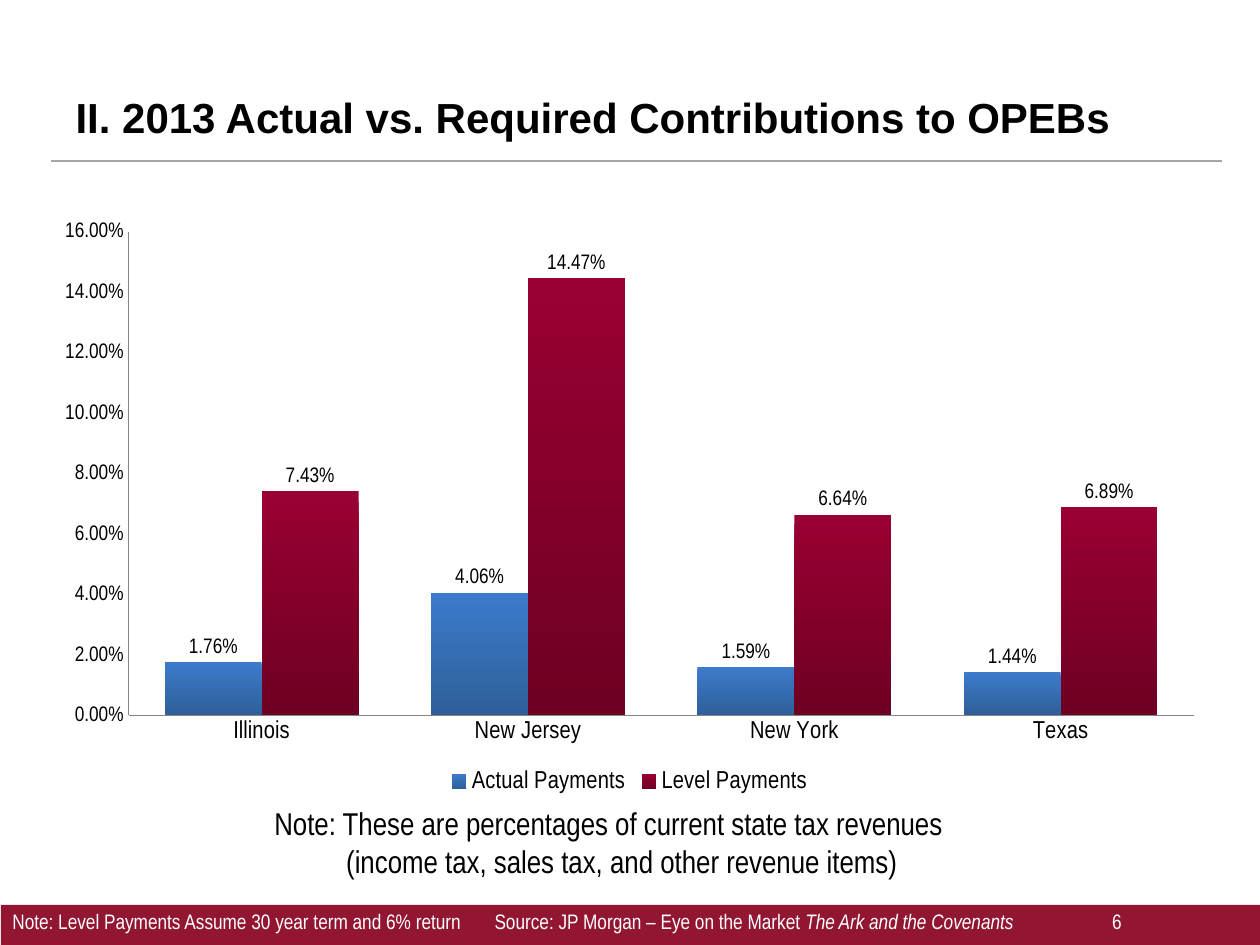
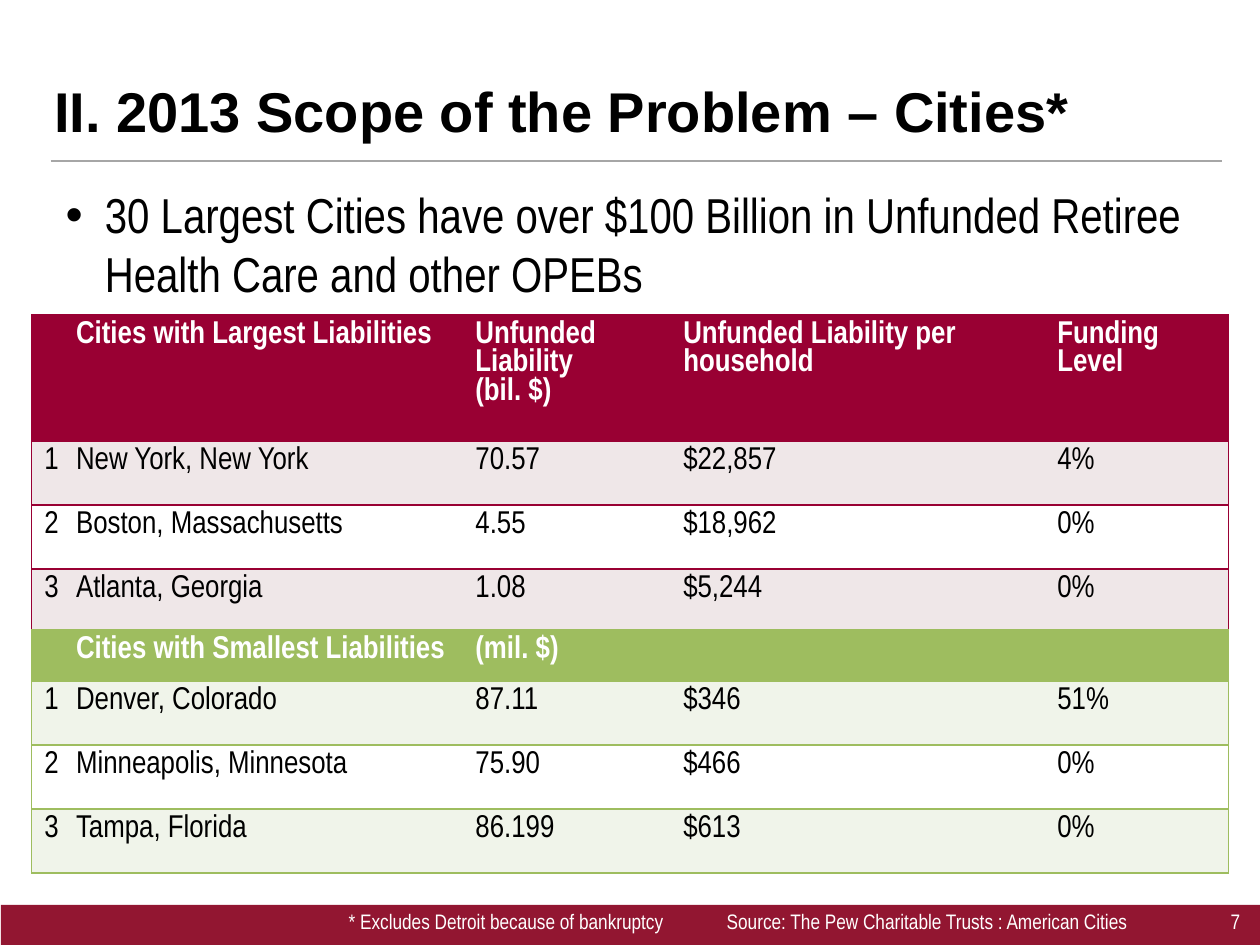
from dataclasses import dataclass

from lxml.etree import SubElement
from pptx import Presentation
from pptx.chart.data import CategoryChartData
from pptx.dml.color import RGBColor
from pptx.enum.chart import XL_CHART_TYPE as ChartType
from pptx.enum.chart import XL_LABEL_POSITION as LabelPosition
from pptx.enum.chart import XL_LEGEND_POSITION as LegendPosition
from pptx.enum.chart import XL_TICK_MARK as TickMark
from pptx.enum.shapes import MSO_CONNECTOR as Connector
from pptx.enum.shapes import MSO_SHAPE as Shape
from pptx.enum.text import MSO_ANCHOR as Anchor
from pptx.enum.text import MSO_AUTO_SIZE as AutoSize
from pptx.enum.text import PP_ALIGN as Align
from pptx.oxml.ns import qn
from pptx.util import Cm, Pt


@dataclass(frozen=True)
class Theme:
    heading: str = "Arial"
    text: str = "Arial Narrow"
    black: str = "000000"
    white: str = "FFFFFF"
    band: str = "921631"
    rule: str = "A6A6A6"
    axis: str = "868686"
    crimson: str = "990033"
    crimson_tint: str = "EFE7E8"
    green: str = "9EBD5F"
    green_tint: str = "F0F4EA"
    actual_bars: tuple = ("3C7BCB", "2E5F99")
    level_bars: tuple = ("990033", "6E0022")
    body_size: int = 28
    table_size: int = 18
    legend_size: int = 14
    small_size: int = 12


theme = Theme()


def style(font, size, color=theme.black, name=theme.text, bold=False):
    font.name, font.size, font.bold = name, Pt(size), bold
    font.color.rgb = RGBColor.from_string(color)


def add_border(cell, side, color):
    line = SubElement(cell._tc.get_or_add_tcPr(), qn(f"a:{side}"), w=str(Pt(1)))
    fill = SubElement(line, qn("a:solidFill"))
    SubElement(fill, qn("a:srgbClr"), val=color)


deck = Presentation()
deck.slide_width, deck.slide_height = Cm(25.4), Cm(19.05)

# What differs in the titles and footers: layout, title (text, size, left, top, width),
# footer (left, inset, tab stops, runs with their italics)
page_parts = [
    (5, ("II. 2013 Actual vs. Required Contributions to OPEBs", 24, 1.27, 0.43, 24.61),
     (0, 0.25, (9.72, 22.17),
      [("Note: Level Payments Assume 30 year term and 6% return\t"
        "Source: JP Morgan – Eye on the Market ", False),
       ("The Ark and the Covenants", True), ("\t6", False)])),
    (1, ("II. 2013 Scope of the Problem – Cities*", 32, 0.84, 0.48, 24.13),
     (5.51, 1.52, (7.62, 17.78),
      [("* Excludes Detroit because of bankruptcy\t"
        "Source: The Pew Charitable Trusts : American Cities\t7", False)])),
]

# Shared frame: band, rule, title, footer
pages = []
for layout, (title_text, title_size, left, top, width), footer_parts in page_parts:
    page = deck.slides.add_slide(deck.slide_layouts[layout])
    pages.append(page)

    band = page.shapes.add_shape(Shape.RECTANGLE, Cm(0.02), Cm(18.24), Cm(25.4), Cm(0.81))
    band.shadow.inherit = False
    band.fill.solid()
    band.fill.fore_color.rgb = RGBColor.from_string(theme.band)
    band.line.fill.background()

    rule = page.shapes.add_connector(Connector.STRAIGHT, Cm(1.02), Cm(3.25), Cm(24.64), Cm(3.25))
    rule.line.color.rgb = RGBColor.from_string(theme.rule)
    rule.line.width = Pt(1.25)
    SubElement(rule._element.spPr, qn("a:effectLst"))

    title = page.shapes.title
    title.left, title.top, title.width, title.height = Cm(left), Cm(top), Cm(width), Cm(2.57)
    title.text_frame.text = title_text
    title.text_frame.vertical_anchor = Anchor.BOTTOM
    title.text_frame.auto_size = AutoSize.NONE
    para = title.text_frame.paragraphs[0]
    para.alignment, para.line_spacing = Align.LEFT, 0.9
    style(para.font, title_size, name=theme.heading, bold=True)

    left, inset, stops, runs = footer_parts
    footer = page.shapes.add_textbox(Cm(left), Cm(18.21), Cm(25.27 - left), Cm(0.84))
    frame = footer.text_frame
    frame.word_wrap = True
    frame.vertical_anchor = Anchor.MIDDLE
    frame.margin_left, frame.margin_right = Cm(inset), 0
    frame.margin_top, frame.margin_bottom = 0, Cm(0.13)
    para = frame.paragraphs[0]
    tabs = SubElement(para._p.get_or_add_pPr(), qn("a:tabLst"))
    for stop in stops:
        SubElement(tabs, qn("a:tab"), pos=str(Cm(stop)), algn="l")
    style(para.font, theme.small_size, theme.white)
    for words, italic in runs:
        span = para.add_run()
        span.text = words
        if italic:
            span.font.italic = True

chart_page, cities_page = pages

# Contributions chart
data = CategoryChartData(number_format="0.00%")
data.categories = ["Illinois", "New Jersey", "New York", "Texas"]
data.add_series("Actual Payments", (0.0176, 0.0406, 0.0159, 0.0144))
data.add_series("Level Payments", (0.0743, 0.1447, 0.0664, 0.0689))
chart = chart_page.shapes.add_chart(
    ChartType.COLUMN_CLUSTERED, Cm(0.84), Cm(4.24), Cm(23.7), Cm(11.86), data).chart
style(chart.font, 10)
chart.has_title = False
chart.has_legend = True
chart.legend.position = LegendPosition.BOTTOM
chart.legend.include_in_layout = False
style(chart.legend.font, theme.legend_size)

for axis, size in ((chart.category_axis, theme.legend_size), (chart.value_axis, theme.small_size)):
    axis.major_tick_mark = axis.minor_tick_mark = TickMark.NONE
    axis.has_major_gridlines = False
    axis.format.line.color.rgb = RGBColor.from_string(theme.axis)
    style(axis.tick_labels.font, size)
values = chart.value_axis
values.minimum_scale, values.maximum_scale, values.major_unit = 0, 0.16, 0.02
values.tick_labels.number_format = "0.00%"
values.tick_labels.number_format_is_linked = False

plot = chart.plots[0]
plot.gap_width, plot.overlap, plot.vary_by_categories = 75, 0, False
for series, colors in zip(plot.series, (theme.actual_bars, theme.level_bars)):
    fill = series.format.fill
    fill.gradient()
    fill.gradient_angle = 270
    for stop, color in zip(fill.gradient_stops, colors):
        stop.color.rgb = RGBColor.from_string(color)
    labels = series.data_labels
    labels.show_value = True
    labels.number_format, labels.number_format_is_linked = "0.00%", False
    labels.position = LabelPosition.OUTSIDE_END
    style(labels.font, theme.small_size)

# Note under the chart
note = chart_page.shapes.add_textbox(Cm(5.28), Cm(16.08), Cm(14.4), Cm(1.8))
note.text_frame.word_wrap = True
note.text_frame.text = ("Note: These are percentages of current state tax revenues\n"
                        "(income tax, sales tax, and other revenue items)")
for para, indent in zip(note.text_frame.paragraphs, (0, 1.45)):
    para._p.get_or_add_pPr().set("marL", str(Cm(indent)))
    style(para.font, theme.table_size)

# Bullet above the tables
body = cities_page.placeholders[1]
body.left, body.top, body.width, body.height = Cm(1.07), Cm(3.6), Cm(23.7), Cm(2.64)
body.text_frame.auto_size = AutoSize.NONE
body.text_frame.text = ("30 Largest Cities have over $100 Billion in Unfunded Retiree "
                        "Health Care and other OPEBs")
para = body.text_frame.paragraphs[0]
props = para._p.get_or_add_pPr()
props.set("marL", str(Cm(0.79)))
props.set("indent", str(-Cm(0.79)))
SubElement(props, qn("a:buFont"), typeface=theme.heading)
SubElement(props, qn("a:buChar"), char="•")
para.space_before = Pt(0)
style(para.font, theme.body_size)

# City tables: top, row heights, main colour, tint, rows
city_tables = [
    (6.35, (2.54, 1.29, 1.29, 1.23), theme.crimson, theme.crimson_tint, [
        ("", "Cities with Largest Liabilities", "Unfunded Liability\v(bil. $)",
         "Unfunded Liability per household", "Funding Level"),
        ("1", "New York, New York", "70.57", "$22,857", "4%"),
        ("2", "Boston, Massachusetts", "4.55", "$18,962", "0%"),
        ("3", "Atlanta, Georgia", "1.08", "$5,244", "0%")]),
    (12.7, (1.03, 1.29, 1.29, 1.29), theme.green, theme.green_tint, [
        ("", "Cities with Smallest Liabilities", "(mil. $)", "", ""),
        ("1", "Denver, Colorado", "87.11", "$346", "51%"),
        ("2", "Minneapolis, Minnesota", "75.90", "$466", "0%"),
        ("3", "Tampa, Florida", "86.199", "$613", "0%")]),
]
column_widths = (0.64, 8.05, 4.19, 7.54, 3.71)
last_column = len(column_widths) - 1

for top, heights, main, tint, rows in city_tables:
    table = cities_page.shapes.add_table(
        len(rows), len(column_widths), Cm(0.64), Cm(top),
        Cm(sum(column_widths)), Cm(sum(heights))).table
    table.first_row = table.horz_banding = False
    # "No Style, No Grid"
    table._tbl.tblPr.find(qn("a:tableStyleId")).text = "{2D5ABB26-0587-4C30-8999-92F81FD0307C}"
    for column, width in zip(table.columns, column_widths):
        column.width = Cm(width)
    for i, (row, height) in enumerate(zip(rows, heights)):
        table.rows[i].height = Cm(height)
        header = i == 0
        fill_color = main if header else tint if i % 2 else theme.white
        for j, words in enumerate(row):
            cell = table.cell(i, j)
            if j == 0:
                add_border(cell, "lnL", main)
            if j == last_column:
                add_border(cell, "lnR", main)
            add_border(cell, "lnT", main)
            add_border(cell, "lnB", main)
            cell.fill.solid()
            cell.fill.fore_color.rgb = RGBColor.from_string(fill_color)
            cell.text_frame.text = words
            para = cell.text_frame.paragraphs[0]
            para.line_spacing = 0.95
            style(para.font, theme.table_size, theme.white if header else theme.black, bold=header)

deck.save("out.pptx")
